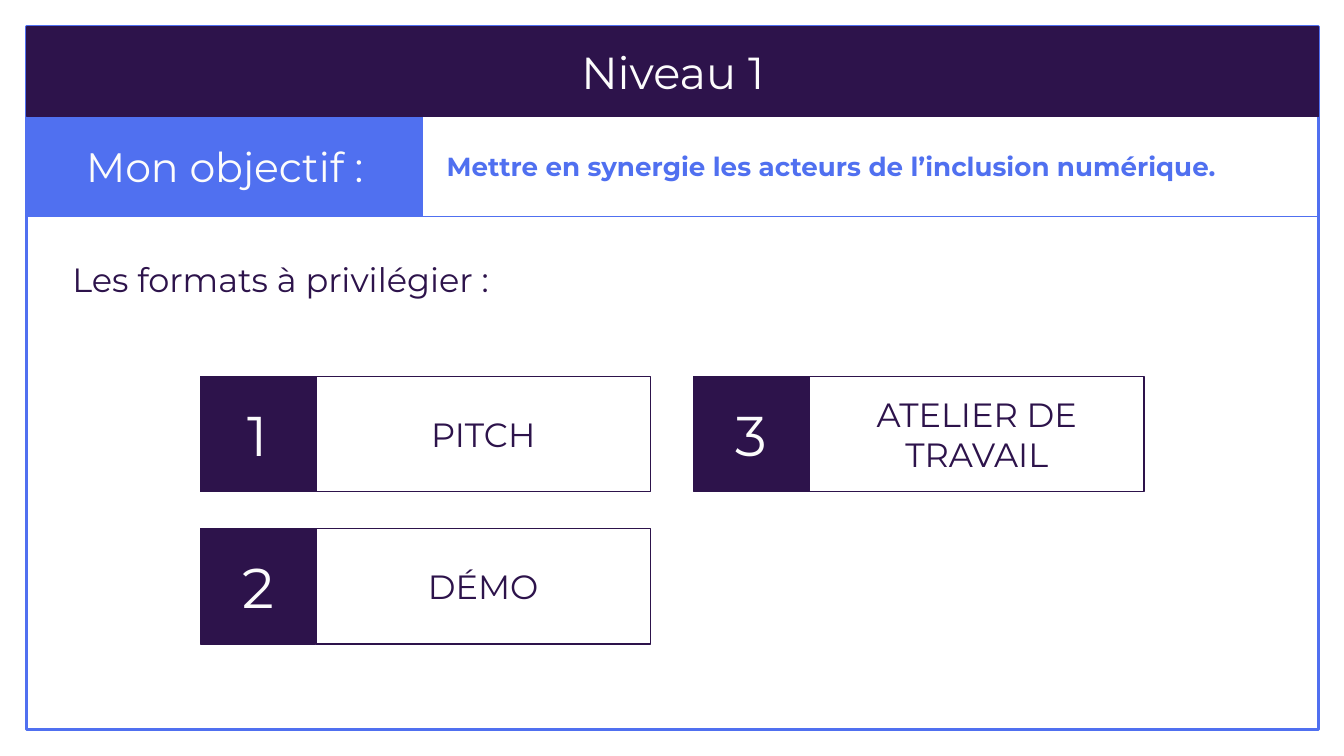
from dataclasses import dataclass
from typing import Optional

import pptx
import pptx.dml.color
import pptx.enum.shapes
import pptx.enum.text
import pptx.util

Pt = pptx.util.Pt
ALIGN = pptx.enum.text.PP_ALIGN

FONT = "Montserrat"
BLUE, PURPLE, WHITE = "5070F0", "2D134B", "FCFCFC"

# Layout, in points
LEFT, TOP, WIDTH, HEIGHT = 14.4, 14.4, 692, 376.6
TITLE_H = 48.2
GOAL_Y, GOAL_H, GOAL_W = 62.6, 53.3, 212
CARD_X, CARD_Y = 107.3, 201.6
CARD_DX, CARD_DY = 264.4, 81.6
CARD_SIDE, LABEL_W = 61.9, 179.3


@dataclass
class Box:
    x: float
    y: float
    w: float
    h: float
    fill: Optional[str] = None
    line: Optional[str] = None
    line_w: float = 0.75


@dataclass
class Label:
    text: str
    size: float
    color: str
    bold: bool = False
    indent: Optional[float] = None  # None means centred


@dataclass
class Card:
    number: int
    text: str
    col: int
    row: int


def rgb(color: str) -> pptx.dml.color.RGBColor:
    return pptx.dml.color.RGBColor.from_string(color)


def paint(sp, box: Box) -> None:
    if box.fill:
        sp.fill.solid()
        sp.fill.fore_color.rgb = rgb(box.fill)
    else:
        sp.fill.background()
    if box.line:
        sp.line.color.rgb = rgb(box.line)
        sp.line.width = Pt(box.line_w)


def write(sp, label: Label) -> None:
    tf = sp.text_frame
    tf.text = label.text
    tf.word_wrap = True
    tf.auto_size = pptx.enum.text.MSO_AUTO_SIZE.NONE
    tf.vertical_anchor = pptx.enum.text.MSO_ANCHOR.MIDDLE
    tf.margin_left = tf.margin_right = tf.margin_top = tf.margin_bottom = Pt(7.2)
    p = tf.paragraphs[0]
    p.alignment = ALIGN.CENTER if label.indent is None else ALIGN.LEFT
    if label.indent is not None:
        pPr = p._p.get_or_add_pPr()
        pPr.set("marL", str(Pt(label.indent)))
        pPr.set("indent", "0")
    font = p.runs[0].font
    font.name, font.size, font.bold = FONT, Pt(label.size), label.bold
    font.color.rgb = rgb(label.color)


def add_box(shapes, box: Box, label: Optional[Label] = None) -> None:
    sp = shapes.add_shape(pptx.enum.shapes.MSO_SHAPE.RECTANGLE,
                          Pt(box.x), Pt(box.y), Pt(box.w), Pt(box.h))
    sp.shadow.inherit = False
    paint(sp, box)
    if label:
        write(sp, label)


def add_card(shapes, card: Card) -> None:
    x, y = CARD_X + card.col * CARD_DX, CARD_Y + card.row * CARD_DY
    group = shapes.add_group_shape().shapes
    add_box(group, Box(x + CARD_SIDE, y, LABEL_W, CARD_SIDE, line=PURPLE),
            Label(card.text, 18, PURPLE))
    add_box(group, Box(x, y, CARD_SIDE, CARD_SIDE, PURPLE, PURPLE),
            Label(str(card.number), 30, WHITE))


def main() -> None:
    prs = pptx.Presentation()
    prs.slide_width, prs.slide_height = Pt(720), Pt(405)
    s = prs.slides.add_slide(prs.slide_layouts[5])

    # Outer frame and objective band
    add_box(s.shapes, Box(LEFT, TOP, WIDTH, HEIGHT, line=BLUE, line_w=1.5))
    add_box(s.shapes, Box(LEFT, GOAL_Y, GOAL_W, GOAL_H, BLUE, BLUE),
            Label("Mon objectif :", 22, WHITE))
    add_box(s.shapes, Box(LEFT + GOAL_W, GOAL_Y, WIDTH - GOAL_W, GOAL_H, line=BLUE),
            Label("Mettre en synergie les acteurs de l’inclusion numérique.",
                  14, BLUE, bold=True, indent=5.8))

    # Title band, raised above the frame
    title = s.shapes.title
    title.left, title.top = Pt(LEFT), Pt(TOP)
    title.width, title.height = Pt(WIDTH), Pt(TITLE_H)
    paint(title, Box(LEFT, TOP, WIDTH, TITLE_H, PURPLE, PURPLE))
    write(title, Label("Niveau 1", 24, WHITE))
    s.shapes.element.append(title.element)

    # Heading of the formats
    heading = s.shapes.add_textbox(Pt(LEFT), Pt(123.1), Pt(414), Pt(GOAL_H))
    write(heading, Label("Les formats à privilégier :", 18, PURPLE, indent=17.3))

    # Format cards
    for card in (Card(3, "ATELIER DE TRAVAIL", 1, 0),
                 Card(1, "PITCH", 0, 0),
                 Card(2, "DÉMO", 0, 1)):
        add_card(s.shapes, card)

    prs.save("out.pptx")


if __name__ == "__main__":
    main()
